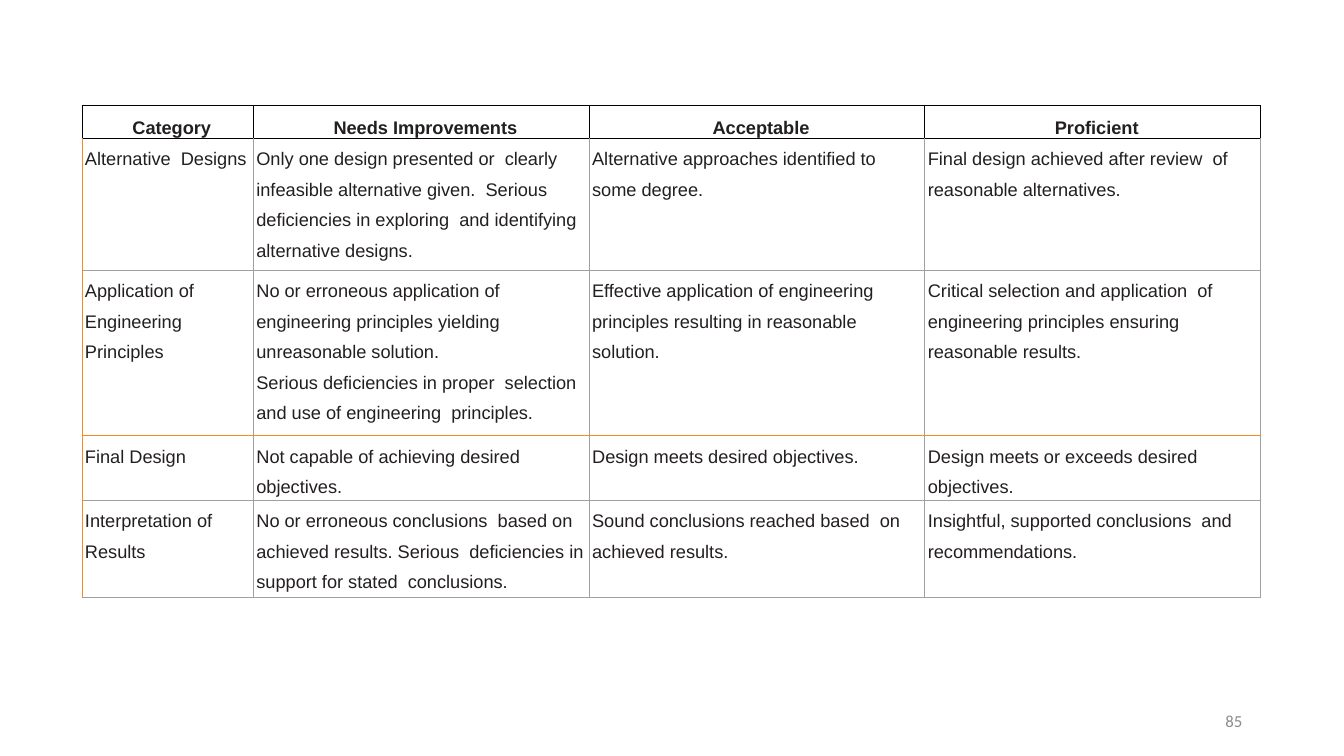
from dataclasses import dataclass

from lxml.etree import SubElement
from pptx import Presentation
from pptx.dml.color import RGBColor
from pptx.enum.text import MSO_ANCHOR, PP_ALIGN
from pptx.oxml.ns import qn
from pptx.util import Inches, Pt

WIDTH, HEIGHT = Inches(13.33), Inches(7.5)


@dataclass(frozen=True)
class Theme:
    """Colours, fonts and type sizes of the slide."""
    ink: str = "231F20"
    header_line: str = "000000"
    grid: str = "A0A0A0"
    accent: str = "F68B1E"
    muted: str = "8C8C8C"
    body_font: str = "Arial"
    number_font: str = "Calibri"
    body_size: int = 13
    number_size: int = 12
    border: float = 0.75


THEME = Theme()
COLUMNS = [1.7, 3.33, 3.33, 3.33]
ROWS = [0.31, 1.31, 1.64, 0.64, 0.97]
ACCENT_ROW = 3
RUBRIC = [
    ["Category", "Needs Improvements", "Acceptable", "Proficient"],
    ["Alternative  Designs",
     "Only one design presented or  clearly infeasible alternative given.  "
     "Serious deficiencies in exploring  and identifying alternative designs.",
     "Alternative approaches identified to some degree.",
     "Final design achieved after review  of reasonable alternatives."],
    ["Application of  Engineering  Principles",
     "No or erroneous application of  engineering principles yielding  "
     "unreasonable solution.\nSerious deficiencies in proper  selection and "
     "use of engineering  principles.",
     "Effective application of engineering  principles resulting in "
     "reasonable  solution.",
     "Critical selection and application  of engineering principles ensuring  "
     "reasonable results."],
    ["Final Design",
     "Not capable of achieving desired  objectives.",
     "Design meets desired objectives.",
     "Design meets or exceeds desired  objectives."],
    ["Interpretation of  Results",
     "No or erroneous conclusions  based on achieved results. Serious  "
     "deficiencies in support for stated  conclusions.",
     "Sound conclusions reached based  on achieved results.",
     "Insightful, supported conclusions  and recommendations."],
]


def format_runs(p, font, size, color, bold=False):
    """Apply one type style to every run of a paragraph."""
    for r in p.runs:
        r.font.name = font
        r.font.size = Pt(size)
        r.font.bold = bold
        r.font.color.rgb = RGBColor.from_string(color)


def border_colors(row, col):
    """Return the left, right, top and bottom line colours of a cell."""
    if row == 0:
        return [THEME.header_line] * 4
    left = THEME.accent if col == 0 else THEME.grid
    tops = {1: THEME.header_line, ACCENT_ROW: THEME.accent}
    bottom = THEME.accent if row + 1 == ACCENT_ROW else THEME.grid
    return [left, THEME.grid, tops.get(row, THEME.grid), bottom]


def set_borders(cell, colors):
    """Draw the four borders of a cell."""
    tcPr = cell._tc.get_or_add_tcPr()
    for i, (side, color) in enumerate(zip("LRTB", colors)):
        ln = SubElement(tcPr, qn(f"a:ln{side}"), w=str(Pt(THEME.border)))
        fill = SubElement(ln, qn("a:solidFill"))
        SubElement(fill, qn("a:srgbClr"), val=color)
        tcPr.insert(i, ln)


def fill_cell(cell, text, row, col):
    """Write and format one cell of the rubric."""
    header = row == 0
    cell.fill.background()
    cell.margin_left = cell.margin_right = cell.margin_bottom = 0
    cell.margin_top = Inches(0.02 if header else 0.01)
    cell.vertical_anchor = MSO_ANCHOR.MIDDLE if header else MSO_ANCHOR.TOP
    cell.text_frame.text = text
    for p in cell.text_frame.paragraphs:
        p.alignment = PP_ALIGN.CENTER if header else PP_ALIGN.LEFT
        p.line_spacing = 1.5
        p._p.get_or_add_pPr().set("marL", str(Inches(0.08 if header else 0.03)))
        format_runs(p, THEME.body_font, THEME.body_size, THEME.ink, header)
    set_borders(cell, border_colors(row, col))


def add_rubric(s):
    """Add the assessment table."""
    frame = s.shapes.add_table(
        len(ROWS), len(COLUMNS), int(WIDTH * 0.061), int(HEIGHT * 0.14),
        Inches(sum(COLUMNS)), Inches(sum(ROWS)))
    table = frame.table
    table.first_row = True
    table.horz_banding = False
    for column, width in zip(table.columns, COLUMNS):
        column.width = Inches(width)
    for row, height in zip(table.rows, ROWS):
        row.height = Inches(height)
    for i, texts in enumerate(RUBRIC):
        for j, text in enumerate(texts):
            fill_cell(table.cell(i, j), text, i, j)


def add_page_number(s, number):
    """Add the page number at the lower right."""
    sp = s.shapes.add_textbox(Inches(9.42), Inches(6.95), Inches(3), Inches(0.4))
    tf = sp.text_frame
    tf.word_wrap = True
    tf.vertical_anchor = MSO_ANCHOR.MIDDLE
    tf.text = number
    p = tf.paragraphs[0]
    p.alignment = PP_ALIGN.RIGHT
    format_runs(p, THEME.number_font, THEME.number_size, THEME.muted)


def main():
    """Build and save the slide."""
    prs = Presentation()
    prs.slide_width, prs.slide_height = WIDTH, HEIGHT
    s = prs.slides.add_slide(prs.slide_layouts[6])
    add_rubric(s)
    add_page_number(s, "85")
    prs.save("out.pptx")


if __name__ == "__main__":
    main()
